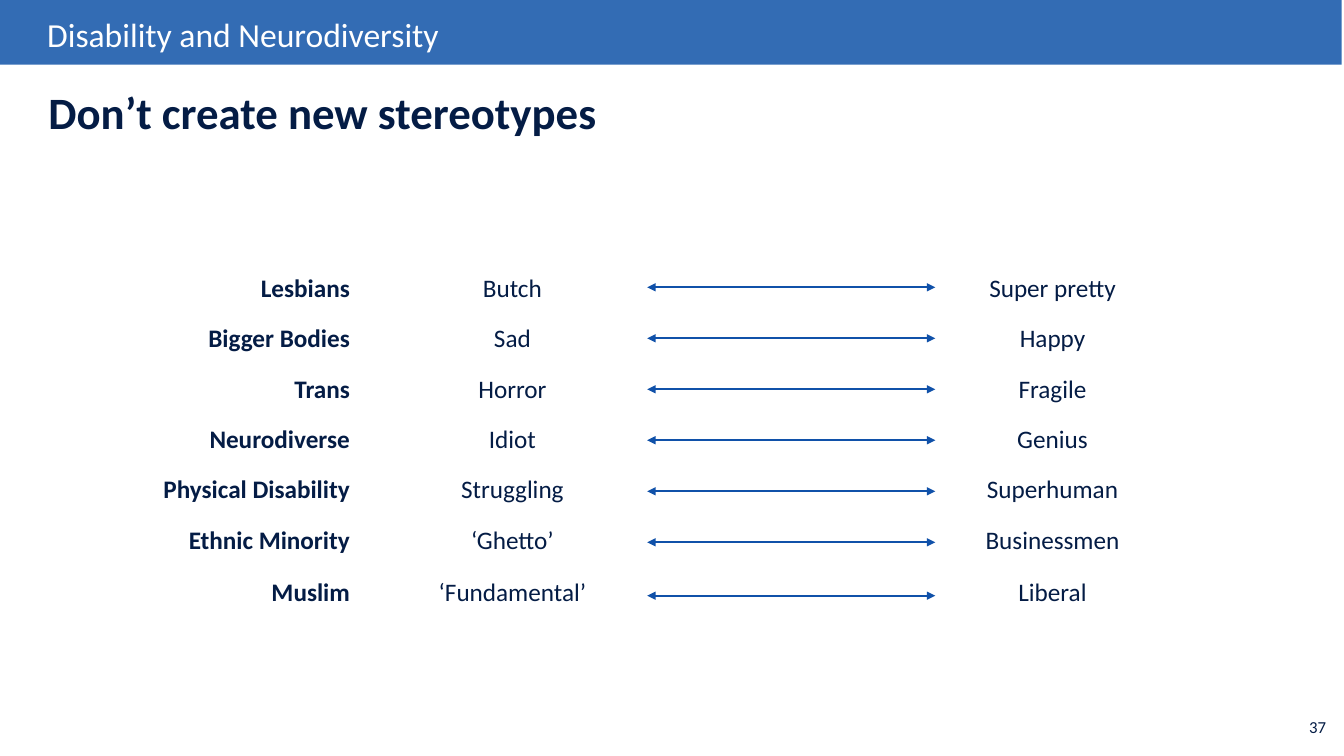
from pptx import Presentation
from pptx.dml.color import RGBColor
from pptx.enum.shapes import MSO_CONNECTOR, MSO_SHAPE
from pptx.enum.text import MSO_ANCHOR, PP_ALIGN
from pptx.oxml.ns import qn
from pptx.util import Cm, Pt
from lxml.etree import SubElement

NAVY = RGBColor(0x04, 0x1C, 0x45)
BAR_BLUE = RGBColor(0x33, 0x6C, 0xB4)
ARROW_BLUE = RGBColor(0x10, 0x51, 0xA9)
WHITE = RGBColor(0xFF, 0xFF, 0xFF)
FONT = "Calibri"

# Group, old stereotype, new stereotype
STEREOTYPES = [
    ("Lesbians", "Butch", "Super pretty"),
    ("Bigger Bodies", "Sad", "Happy"),
    ("Trans", "Horror", "Fragile"),
    ("Neurodiverse", "Idiot", "Genius"),
    ("Physical Disability", "Struggling", "Superhuman"),
    ("Ethnic Minority", "‘Ghetto’", "Businessmen"),
    ("Muslim", "‘Fundamental’", "Liberal"),
]
# Left edge in cm, alignment, bold
COLUMNS = [
    (2.24, PP_ALIGN.RIGHT, True),
    (9.5, PP_ALIGN.CENTER, False),
    (23.11, PP_ALIGN.CENTER, False),
]
COLUMN_WIDTH = 6.83
ROW_HEIGHT = 1.02
TEXT_TOP, TEXT_PITCH = 6.73, 1.27
ARROW_TOP, ARROW_PITCH = 7.24, 1.285
ARROW_LEFT, ARROW_RIGHT = 16.31, 23.57
LAST_ROW_DROP = 0.06


def write(tf, text, size, color=NAVY, bold=False, align=PP_ALIGN.LEFT):
    tf.word_wrap = True
    p = tf.paragraphs[0]
    p.alignment = align
    r = p.add_run()
    r.text = text
    r.font.name = FONT
    r.font.size = Pt(size)
    r.font.bold = bold
    r.font.color.rgb = color


def add_label(shapes, box, text, size, **style):
    """Add a text box; box is left, top, width, height in cm."""
    tb = shapes.add_textbox(*map(Cm, box))
    write(tb.text_frame, text, size, **style)


def add_header(s):
    bar = s.shapes.add_shape(MSO_SHAPE.RECTANGLE, 0, 0, Cm(33.81), Cm(1.63))
    bar.shadow.inherit = False
    bar.fill.solid()
    bar.fill.fore_color.rgb = BAR_BLUE
    bar.line.fill.background()
    add_label(s.shapes, (0.94, 0.23, 13.69, 1.27),
              "Disability and Neurodiversity", 24, color=WHITE)


def set_title(s, text):
    title = s.shapes.title
    title.left, title.top = Cm(1.22), Cm(2.13)
    title.width, title.height = Cm(32.26), Cm(1.35)
    tf = title.text_frame
    tf.margin_left = tf.margin_right = tf.margin_top = tf.margin_bottom = 0
    tf.vertical_anchor = MSO_ANCHOR.MIDDLE
    write(tf, text, 32, bold=True)
    tf.paragraphs[0].line_spacing = Pt(39.2)


def add_double_arrow(shapes, y):
    arrow = shapes.add_connector(MSO_CONNECTOR.STRAIGHT, Cm(ARROW_LEFT), Cm(y),
                                 Cm(ARROW_RIGHT), Cm(y))
    arrow.line.color.rgb = ARROW_BLUE
    arrow.line.width = Pt(1.5)
    ln = arrow.line._get_or_add_ln()
    for end in ("a:headEnd", "a:tailEnd"):
        SubElement(ln, qn(end), type="triangle")
    SubElement(arrow._element.spPr, qn("a:effectLst"))


def add_stereotype_rows(s):
    shapes = s.shapes.add_group_shape().shapes
    for i, row in enumerate(STEREOTYPES):
        drop = LAST_ROW_DROP if i == len(STEREOTYPES) - 1 else 0
        add_double_arrow(shapes, ARROW_TOP + i * ARROW_PITCH + drop)
        top = TEXT_TOP + i * TEXT_PITCH + drop
        for text, (left, align, bold) in zip(row, COLUMNS):
            add_label(shapes, (left, top, COLUMN_WIDTH, ROW_HEIGHT), text, 18,
                      bold=bold, align=align)


def main():
    prs = Presentation()
    prs.slide_width, prs.slide_height = Cm(33.87), Cm(19.05)
    s = prs.slides.add_slide(prs.slide_layouts[5])
    add_header(s)
    set_title(s, "Don’t create new stereotypes")
    add_stereotype_rows(s)
    add_label(s.shapes, (32.74, 17.93, 1.13, 1.02), "37", 12)
    prs.save("out.pptx")


if __name__ == "__main__":
    main()
